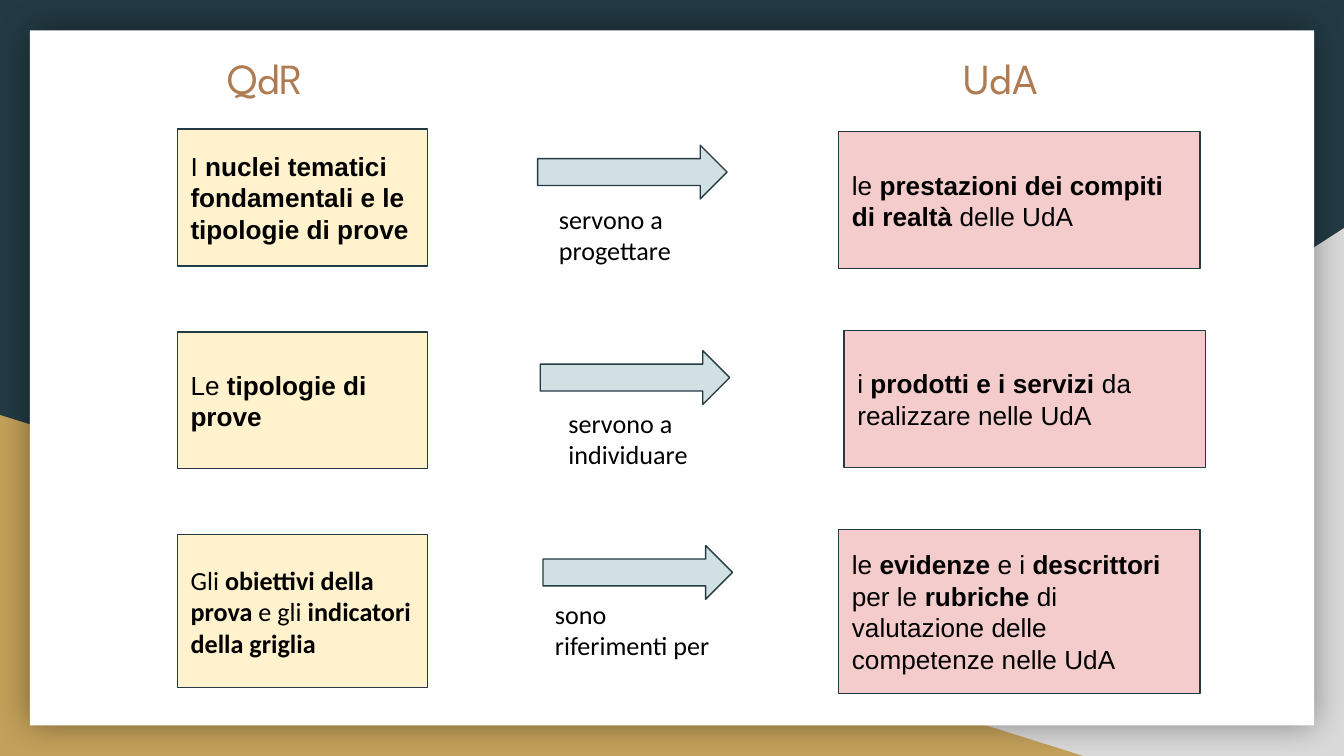
from lxml import etree
from pptx import Presentation
from pptx.dml.color import RGBColor
from pptx.enum.shapes import MSO_SHAPE
from pptx.enum.text import MSO_ANCHOR, MSO_AUTO_SIZE, PP_ALIGN
from pptx.oxml.ns import qn
from pptx.util import Pt

RECT, ARROW, WEDGE = MSO_SHAPE.RECTANGLE, MSO_SHAPE.RIGHT_ARROW, MSO_SHAPE.RIGHT_TRIANGLE
TOP, MIDDLE = MSO_ANCHOR.TOP, MSO_ANCHOR.MIDDLE
LEFT = PP_ALIGN.LEFT
GROW, FIXED = MSO_AUTO_SIZE.SHAPE_TO_FIT_TEXT, MSO_AUTO_SIZE.NONE

# Content: **bold**, one line of text per paragraph
HEADS = ["QdR", "UdA"]
SOURCES = [
    "I **nuclei tematici**\n**fondamentali e le**\n**tipologie di prove**",
    "Le** tipologie di prove**",
    "Gli **obiettivi della prova** e gli** indicatori della griglia**",
]
LINKS = ["servono a progettare", "servono a individuare", "sono riferimenti per"]
TARGETS = [
    "le **prestazioni dei compiti di realtà **delle UdA",
    "i **prodotti e i servizi** da realizzare nelle UdA",
    "le **evidenze **e i **descrittori** per le **rubriche** di valutazione"
    " delle competenze nelle UdA",
]

THEME = {
    "dark": "233A44", "gold": "C4A15A", "grey": "D9D9D9", "white": "FFFFFF",
    "cream": "FFF2CC", "pink": "F4CCCC", "ice": "D0E0E3",
    "head": "AF7B51", "ink": "000000",
    "sans": "Arial", "soft": "Calibri", "show": "League Spartan",
    "text": 14, "title": 23, "line": 0.75, "inset": 7.2,
}

# Layout in points
WIDTH, HEIGHT = 720, 405
ROW_TOP, PITCH = 69.1, 108.7
BOX_X, BOX_W, BOX_H = 95, 134, 73.4
GOAL_W = 193.7
GOALS = [(449.3, 70.6, 73.4), (452.2, 177.1, 73.4), (449.3, 283.7, 87.8)]
ARROW_W, ARROW_H = 101.5, 28.8
ARROWS = [(288, 77.8), (289.4, 187.9), (290.9, 292.3)]
LABELS = [(292.3, 101.5, 101.5), (297.4, 211, 85.7), (290.2, 313.2, 101.5)]
LABEL_H = 48.2
HEAD_Y, HEAD_H = 20.2, 42.5
HEAD_X = [(114.5, 120.2), (509, 153.4)]


def tint(name):
    return RGBColor.from_string(THEME[name])


def write(shape, text, font="sans", size="text", color="ink", anchor=TOP, fit=GROW):
    frame = shape.text_frame
    frame.word_wrap = True
    frame.auto_size = fit
    frame.vertical_anchor = anchor
    frame.margin_left = frame.margin_right = Pt(THEME["inset"])
    frame.margin_top = frame.margin_bottom = Pt(THEME["inset"])
    for i, line in enumerate(text.split("\n")):
        para = frame.add_paragraph() if i else frame.paragraphs[0]
        para.alignment = LEFT
        for j, part in enumerate(line.split("**")):
            if part:
                run = para.add_run()
                run.text = part
                run.font.name = THEME[font]
                run.font.size = Pt(THEME[size])
                run.font.bold = j % 2 == 1
                run.font.color.rgb = tint(color)


def draw(slide, kind, x, y, w, h, fill, edge=None):
    shape = slide.shapes.add_shape(kind, Pt(x), Pt(y), Pt(w), Pt(h))
    shape.shadow.inherit = False
    shape.fill.solid()
    shape.fill.fore_color.rgb = tint(fill)
    if edge:
        shape.line.color.rgb = tint(edge)
        shape.line.width = Pt(THEME["line"])
    else:
        shape.line.fill.background()
    return shape


def flip(shape):
    shape._element.spPr.find(qn("a:xfrm")).set("flipH", "1")


def glow(shape, blur, alpha):
    effects = shape._element.spPr.find(qn("a:effectLst"))
    outer = etree.SubElement(effects, qn("a:outerShdw"), blurRad=str(Pt(blur)),
                             dist="0", dir="0", algn="ctr", rotWithShape="0")
    color = etree.SubElement(outer, qn("a:srgbClr"), val=THEME["ink"])
    etree.SubElement(color, qn("a:alpha"), val=str(alpha * 1000))


def label(slide, x, y, w, h):
    return slide.shapes.add_textbox(Pt(x), Pt(y), Pt(w), Pt(h))


def main():
    deck = Presentation()
    deck.slide_width, deck.slide_height = Pt(WIDTH), Pt(HEIGHT)
    slide = deck.slides.add_slide(deck.slide_layouts[5])

    # Backdrop
    slide.background.fill.solid()
    slide.background.fill.fore_color.rgb = tint("dark")
    flip(draw(slide, WEDGE, 282.2, 122.2, 437.8, 282.8, "grey"))
    draw(slide, WEDGE, 0, 222.3, 580.3, 182.7, "gold")
    glow(draw(slide, RECT, 16, 16.3, 688, 372.4, "white"), 18, 40)

    # Rows: source box, arrow with its label, target box
    for i in range(len(SOURCES)):
        tall = 82 if i == 2 else BOX_H
        box = draw(slide, RECT, BOX_X, ROW_TOP + i * PITCH, BOX_W, tall, "cream", "dark")
        write(box, SOURCES[i], font="soft" if i == 2 else "sans", anchor=MIDDLE, fit=FIXED)

        draw(slide, ARROW, *ARROWS[i], ARROW_W, ARROW_H, "ice", "dark")
        write(label(slide, *LABELS[i], LABEL_H), LINKS[i], font="soft")

        x, y, h = GOALS[i]
        goal = draw(slide, RECT, x, y, GOAL_W, h, "pink", "dark")
        write(goal, TARGETS[i], anchor=MIDDLE, fit=FIXED)

    # Column heads: the title placeholder, raised above the panel, and its twin
    title = slide.shapes.title
    slide.shapes._spTree.append(title._element)
    (x, w), (twin_x, twin_w) = HEAD_X
    title.left, title.top, title.width, title.height = Pt(x), Pt(HEAD_Y), Pt(w), Pt(HEAD_H)
    twin = label(slide, twin_x, HEAD_Y, twin_w, HEAD_H)
    for shape, text in zip((title, twin), HEADS):
        write(shape, text, font="show", size="title", color="head")

    deck.save("out.pptx")


if __name__ == "__main__":
    main()
